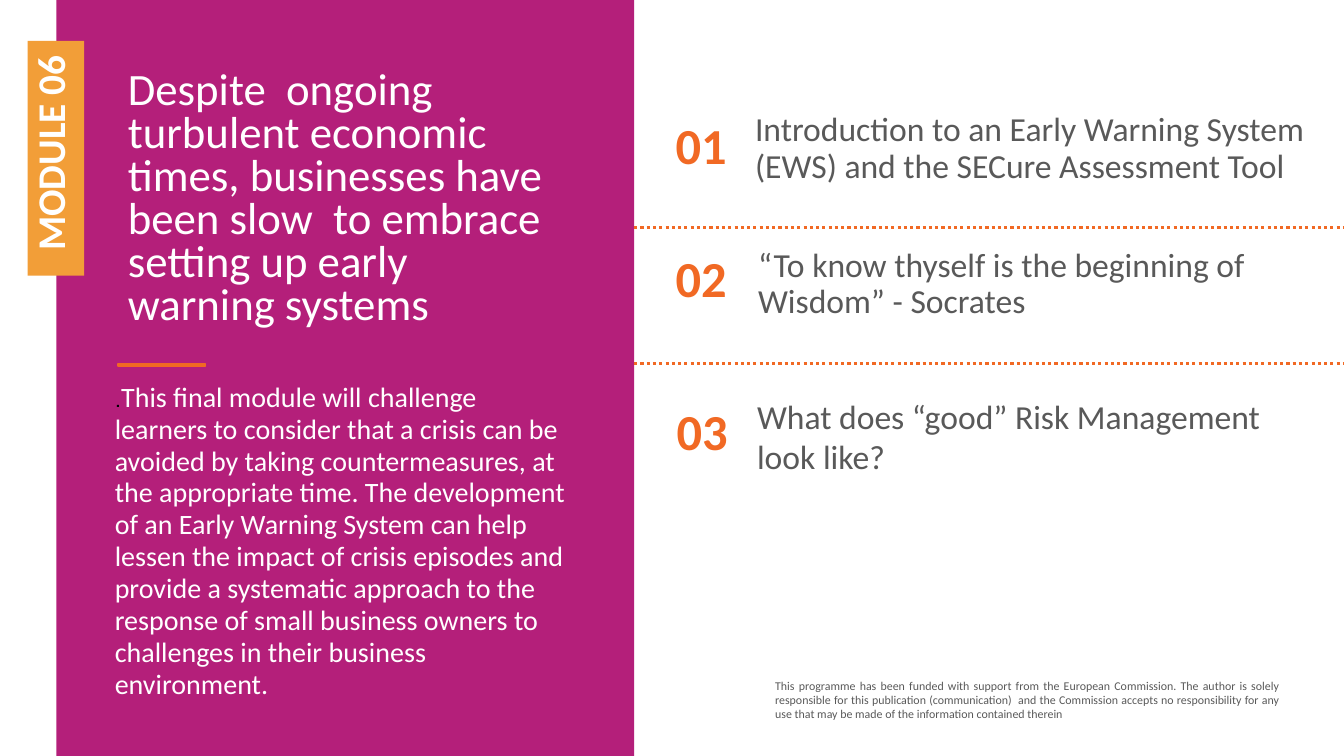
from lxml import etree
from pptx import Presentation
from pptx import util as u
from pptx.dml.color import RGBColor
from pptx.enum import dml, shapes, text
from pptx.oxml.ns import qn

COLOURS = {
    "magenta": "B41F7A",
    "orange": "F16924",
    "amber": "F29E38",
    "grey": "595959",
    "white": "FFFFFF",
    "black": "000000",
}
LEFT, CENTER, JUSTIFY = text.PP_ALIGN.LEFT, text.PP_ALIGN.CENTER, text.PP_ALIGN.JUSTIFY
TOP, MIDDLE = text.MSO_ANCHOR.TOP, text.MSO_ANCHOR.MIDDLE

deck = Presentation()
deck.slide_width, deck.slide_height = u.Inches(13.33), u.Inches(7.5)
page = deck.slides.add_slide(deck.slide_layouts[6])


def add_block(place, fill):
    block = page.shapes.add_shape(shapes.MSO_SHAPE.RECTANGLE, *map(u.Inches, place))
    block.shadow.inherit = False
    block.fill.solid()
    block.fill.fore_color.rgb = RGBColor.from_string(COLOURS[fill])
    block.line.fill.background()
    return block


def write(box, runs, align=LEFT, anchor=TOP, spacing=1.0):
    frame = box.text_frame
    frame.word_wrap = True
    frame.vertical_anchor = anchor
    para = frame.paragraphs[0]
    para.alignment = align
    para.line_spacing = spacing
    for words, size, colour, bold, font in runs:
        span = para.add_run()
        span.text = words
        span.font.size = u.Pt(size)
        span.font.name = font
        span.font.bold = bold
        span.font.color.rgb = RGBColor.from_string(COLOURS[colour])
    return para


add_block((0.56, 0, 5.73, 7.5), "magenta")

module_tab = add_block((-0.61, 1.29, 2.33, 0.56), "amber")
module_tab.rotation = 270
module_label = write(module_tab, [("MODULE 06", 28, "white", True, "Calibri")],
                     anchor=MIDDLE, spacing=u.Pt(24.4))
module_label._p.get_or_add_pPr().set("marL", str(u.Inches(0.15)))

accent = add_block((1.17, 3.61, 0.87, 0.02), "orange")
accent.line.color.rgb = RGBColor.from_string(COLOURS["orange"])
accent.line.width = u.Pt(1)

title = "Despite  ongoing turbulent economic times, businesses have been slow  to embrace setting up early warning systems"
summary = (
    "This final module will challenge learners to consider that a crisis can be avoided "
    "by taking countermeasures, at the appropriate time. The development of an Early Warning "
    "System can help lessen the impact of crisis episodes and provide a systematic approach "
    "to the response of small business owners to challenges in their business environment."
)
funding = (
    "This programme has been funded with support from the European Commission. "
    "The author is solely responsible for this publication (communication)  and the Commission "
    "accepts no responsibility for any use that may be made of the information contained therein"
)

passages = [
    ((1.17, 0.66, 4.47, 2.97), [(title, 32, "white", False, "Calibri")], LEFT, TOP, 0.8),
    ((1.04, 3.73, 4.74, 2.71), [(".", 18, "black", False, "Manrope"),
                                (summary, 20, "white", False, "Calibri")], LEFT, TOP, u.Pt(22.8)),
    ((7.59, 6.68, 5.2, 0.53), [(funding, 8.5, "grey", False, "Calibri")], JUSTIFY, TOP, 1.0),
]

topics = [
    ("01", (6.5, 1.12), "Introduction to an Early Warning System (EWS) and the SECure Assessment Tool",
     (7.39, 1.03, 5.77, 0.9), MIDDLE, 0.9),
    ("02", (6.5, 2.44), "“To know thyself is the beginning of Wisdom” - Socrates",
     (7.42, 2.48, 5.2, 0.69), MIDDLE, 0.9),
    ("03", (6.51, 3.96), "What does “good” Risk Management look like?",
     (7.41, 3.88, 5.59, 0.91), TOP, 1.0),
]
for number, corner, topic, place, anchor, spacing in topics:
    passages.append(((*corner, 0.91, 0.69), [(number, 36, "orange", True, "Calibri")],
                     CENTER, MIDDLE, 0.9))
    passages.append((place, [(topic, 24, "grey", False, "Calibri")], LEFT, anchor, spacing))

for place, runs, align, anchor, spacing in passages:
    box = page.shapes.add_textbox(*map(u.Inches, place))
    write(box, runs, align, anchor, spacing)

for height in (2.26, 3.61):
    divider = page.shapes.add_connector(
        shapes.MSO_CONNECTOR.STRAIGHT,
        u.Inches(6.29), u.Inches(height), u.Inches(13.33), u.Inches(height))
    divider.line.color.rgb = RGBColor.from_string(COLOURS["orange"])
    divider.line.width = u.Pt(2.25)
    divider.line.dash_style = dml.MSO_LINE.ROUND_DOT
    etree.SubElement(divider._element.spPr, qn("a:effectLst"))

deck.save("out.pptx")
